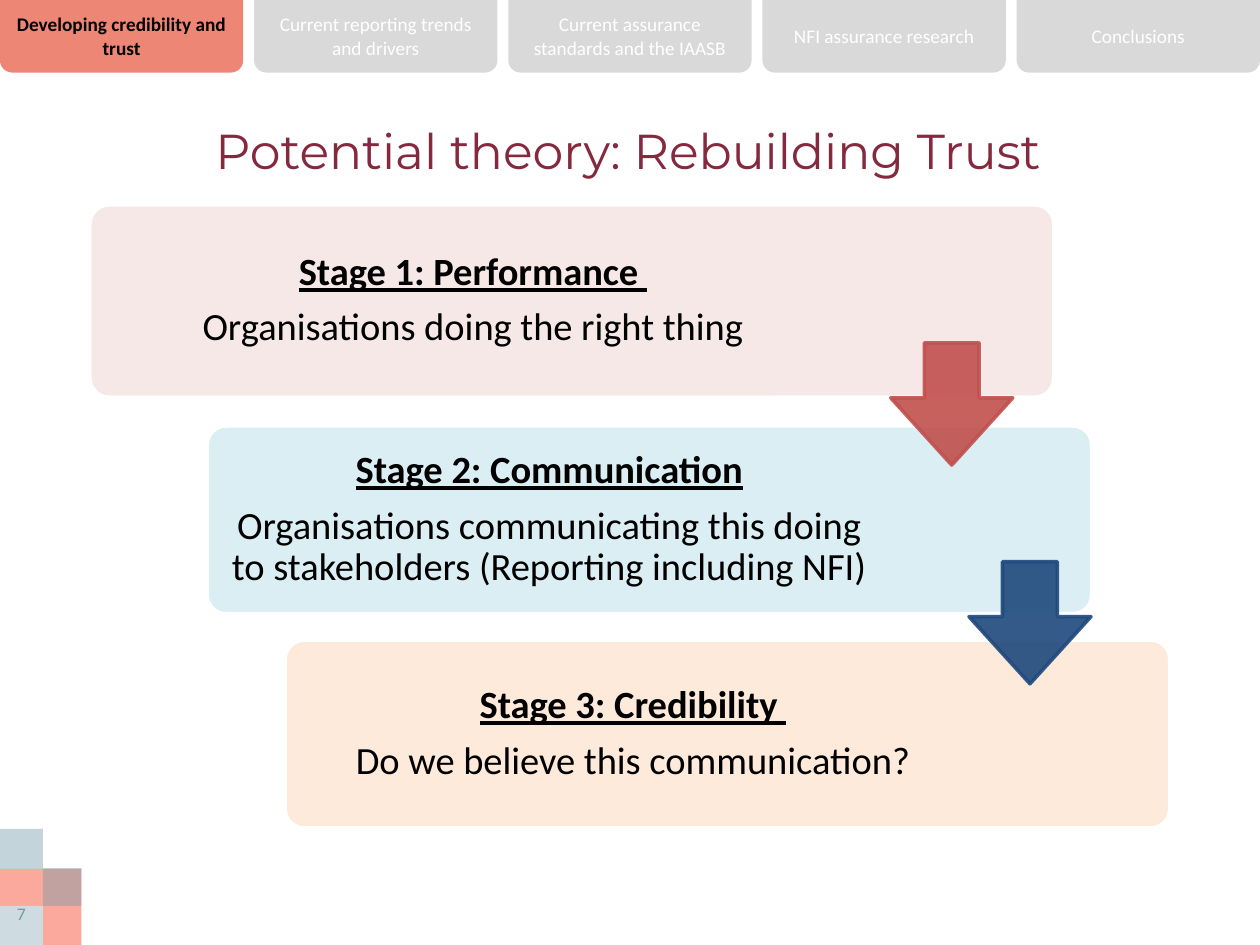
from lxml.etree import SubElement
from pptx import Presentation
from pptx.dml.color import RGBColor
from pptx.enum.shapes import MSO_SHAPE as SHAPE
from pptx.enum.text import MSO_ANCHOR as ANCHOR, PP_ALIGN as ALIGN
from pptx.oxml.ns import qn
from pptx.util import Pt


def color(value):
    return RGBColor.from_string(value)


class Deck:
    font = "Calibri"
    black, white, grey, slate = "000000", "FFFFFF", "D9D9D9", "7198A9"

    def __init__(self):
        self.prs = Presentation()
        self.prs.slide_width, self.prs.slide_height = Pt(720), Pt(540)
        self.s = self.prs.slides.add_slide(self.prs.slide_layouts[6])

    def shape(self, kind, box, fill, line=None, alpha=None, adj=()):
        sp = self.s.shapes.add_shape(kind, *map(Pt, box))
        sp.shadow.inherit = False
        for i, value in enumerate(adj):
            sp.adjustments[i] = value
        sp.fill.solid()
        sp.fill.fore_color.rgb = color(fill)
        if line:
            sp.line.color.rgb = color(line)
            sp.line.width = Pt(2)
        else:
            sp.line.fill.background()
        if alpha:
            # Opacity applies wherever the fill colour is used
            for clr in sp.element.spPr.iter(qn("a:srgbClr")):
                if clr.get("val") == fill:
                    SubElement(clr, qn("a:alpha"), val=str(alpha * 1000))
        return sp

    def text(self, box, paragraphs, size, fill, font=None, anchor=ANCHOR.MIDDLE,
             insets=(7.2, 3.6, 7.2, 3.6), spacing=None, after=0):
        """Each paragraph is (text, bold, underline)."""
        tf = self.s.shapes.add_textbox(*map(Pt, box)).text_frame
        tf.word_wrap = True
        tf.vertical_anchor = anchor
        (tf.margin_left, tf.margin_top,
         tf.margin_right, tf.margin_bottom) = map(Pt, insets)
        for i, (content, bold, underline) in enumerate(paragraphs):
            p = tf.add_paragraph() if i else tf.paragraphs[0]
            p.alignment = ALIGN.CENTER
            p.space_after = Pt(after)
            if spacing:
                p.line_spacing = spacing
            r = p.add_run()
            r.text = content
            r.font.name = font or self.font
            r.font.size = Pt(size)
            r.font.bold, r.font.underline = bold, underline
            r.font.color.rgb = color(fill)

    def tab(self, index, label, lines, active):
        left, width = index * 145.25, 139
        self.shape(SHAPE.ROUND_2_SAME_RECTANGLE, (left, 0, width, 41.5),
                   "ED8674" if active else self.grey, adj=(0, 0.17))
        height = 7.2 + 13.4 * lines
        self.text((left, 20.5 - height / 2, width, height),
                  [(label, active, False)], 11,
                  self.black if active else self.white)

    def stage(self, box, fill, alpha, text_width, right, heading, body):
        left, top, width, height = box
        self.shape(SHAPE.ROUNDED_RECTANGLE, box, fill, self.white, alpha, (0.1,))
        self.text((left + 3.2, top + 3.2, text_width, height - 6.4),
                  [(heading, True, True), (body, False, False)], 22, self.black,
                  insets=(6.6, 6.6, right, 6.6), spacing=0.9, after=7.7)

    def arrow(self, left, top, fill):
        self.shape(SHAPE.DOWN_ARROW, (left, top, 69.8, 69.8), fill, fill, 90,
                   (0.45, 0.55))


def main():
    d = Deck()

    # Corner squares and page number
    for box, fill, alpha in [
        ((0, 496.5, 46.5, 43.5), "FAA99C", None),
        ((0, 517.7, 24.5, 22.3), "CEDBE0", None),
        ((0, 473.7, 24.5, 22.8), d.slate, 41),
        ((24.5, 496.1, 22, 21.6), d.slate, 41),
    ]:
        d.shape(SHAPE.RECTANGLE, box, fill, alpha=alpha)
    d.text((0, 512.6, 24.5, 27.4), [("7", False, False)], 10.1, d.slate,
           anchor=ANCHOR.TOP, insets=(0, 3.6, 0, 3.6))

    # Title
    d.text((8.6, 49.7, 700.6, 72),
           [("Potential theory: Rebuilding Trust", False, False)],
           28, "85293F", font="Montserrat")

    # Navigation tabs
    tabs = [("Developing credibility and trust", 2),
            ("Current reporting trends and drivers", 2),
            ("Current assurance standards and the IAASB", 2),
            ("NFI assurance research", 1),
            ("Conclusions", 1)]
    for i, (label, lines) in enumerate(tabs):
        d.tab(i, label, lines, active=i == 0)

    # Stages
    d.stage((51.4, 117, 550.8, 110), "F2DCDB", 65, 424.8, 0,
            "Stage 1: Performance ", "Organisations doing the right thing")
    d.stage((118.4, 243.4, 505.4, 107.3), "DBEEF4", None, 384.5, 6.6,
            "Stage 2: Communication",
            "Organisations communicating this doing to stakeholders "
            "(Reporting including NFI)")
    d.stage((163, 365.8, 505.4, 107.3), "FDEADA", None, 384.5, 0,
            "Stage 3: Credibility ", "Do we believe this communication?")

    # Arrows between stages
    d.arrow(509, 196, "C0504D")
    d.arrow(553.7, 321, "1F497D")

    d.prs.save("out.pptx")


if __name__ == "__main__":
    main()
